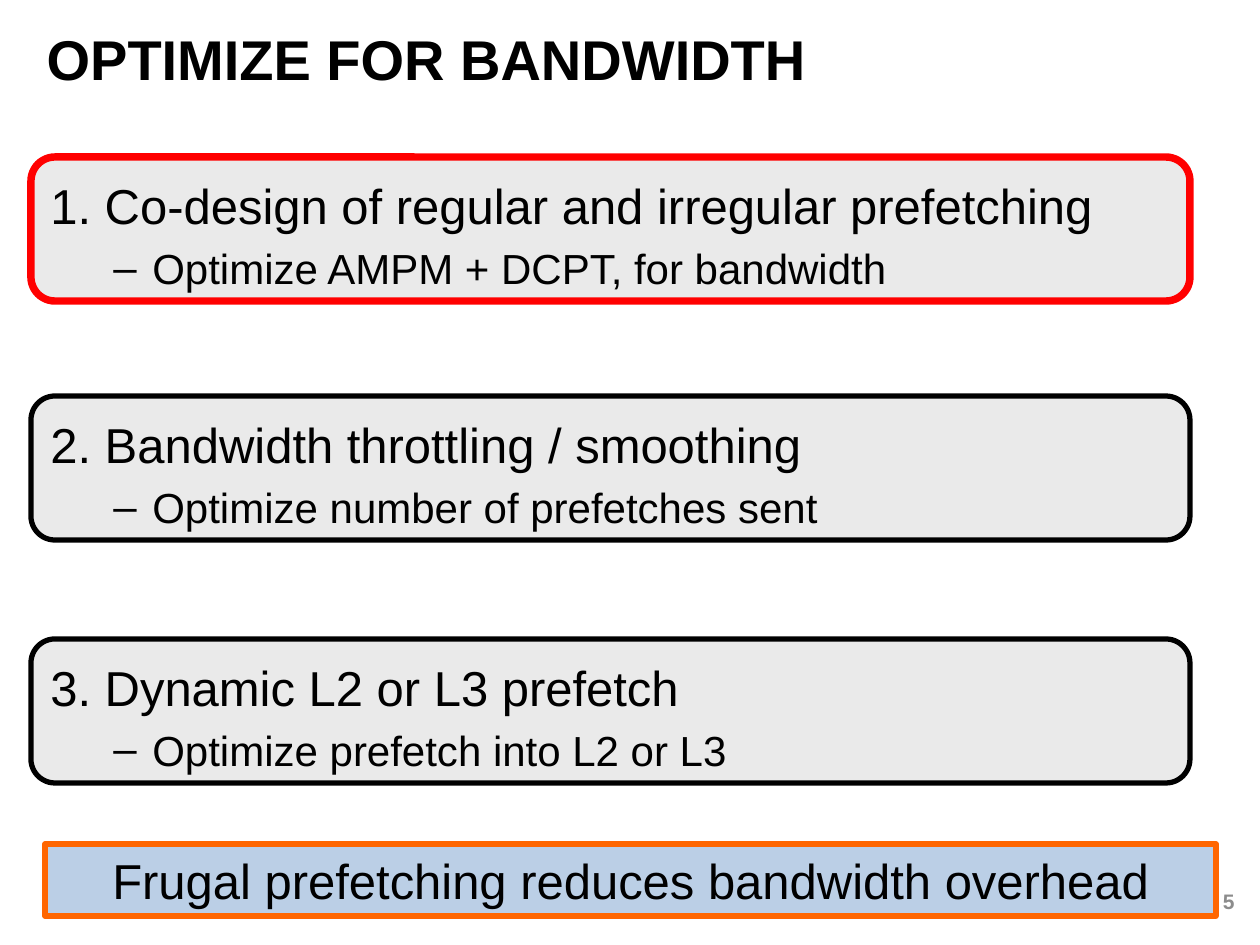
from pptx import Presentation
from pptx.dml.color import RGBColor
from pptx.enum.shapes import MSO_SHAPE
from pptx.enum.text import MSO_ANCHOR, PP_ALIGN
from pptx.oxml.ns import qn
from pptx.util import Inches, Pt
from lxml.etree import SubElement

COLORS = {"text": "000000", "number": "8C8C8C", "card": "EAEAEA",
          "bar": "BBCFE6", "bar_line": "FF6600", "highlight": "FF0000"}
PX = Inches(1) / 126


def add_panel(kind, bounds, fill, line, line_width):
    panel = slide.shapes.add_shape(kind, *[round(v * PX) for v in bounds])
    panel.shadow.inherit = False
    if fill:
        panel.fill.solid()
        panel.fill.fore_color.rgb = RGBColor.from_string(COLORS[fill])
    else:
        panel.fill.background()
    panel.line.color.rgb = RGBColor.from_string(COLORS[line])
    panel.line.width = Pt(line_width)
    return panel


def set_text(paragraph, text, size, align=PP_ALIGN.LEFT, color="text", bold=False):
    paragraph.text = text
    paragraph.alignment = align
    font = paragraph.runs[0].font
    font.name = "Arial"
    font.size = Pt(size)
    font.bold = bold
    font.color.rgb = RGBColor.from_string(COLORS[color])


prs = Presentation()
prs.slide_width = round(1260 * PX)
prs.slide_height = round(945 * PX)
slide = prs.slides.add_slide(prs.slide_layouts[5])

title = slide.shapes.title
title.left, title.top, title.width, title.height = [
    round(v * PX) for v in (34, 25, 1155, 67)]
title.text_frame.vertical_anchor = MSO_ANCHOR.MIDDLE
set_text(title.text_frame.paragraphs[0], "OPTIMIZE FOR BANDWIDTH", 32, bold=True)

page_number = slide.shapes.add_textbox(*[round(v * PX) for v in (954, 876, 293, 50)])
page_number.text_frame.word_wrap = True
page_number.text_frame.vertical_anchor = MSO_ANCHOR.MIDDLE
set_text(page_number.text_frame.paragraphs[0], "5", 12, PP_ALIGN.RIGHT, "number", True)

takeaway = add_panel(MSO_SHAPE.RECTANGLE, (45, 844, 1171, 72), "bar", "bar_line", 3)
takeaway.text_frame.word_wrap = True
takeaway.text_frame.vertical_anchor = MSO_ANCHOR.TOP
set_text(takeaway.text_frame.paragraphs[0],
         "Frugal prefetching reduces bandwidth overhead", 28, PP_ALIGN.CENTER)

CARD_LEFT, CARD_WIDTH, CARD_HEIGHT = 31, 1159, 144
optimizations = [
    (157, "1. Co-design of regular and irregular prefetching",
     "Optimize AMPM + DCPT, for bandwidth"),
    (396, "2. Bandwidth throttling / smoothing",
     "Optimize number of prefetches sent"),
    (639, "3. Dynamic L2 or L3 prefetch",
     "Optimize prefetch into L2 or L3"),
]
for top, heading, detail in optimizations:
    card = add_panel(MSO_SHAPE.ROUNDED_RECTANGLE,
                     (CARD_LEFT, top, CARD_WIDTH, CARD_HEIGHT), "card", "text", 3)
    frame = card.text_frame
    frame.word_wrap = True
    frame.vertical_anchor = MSO_ANCHOR.MIDDLE
    frame.margin_top = round(16 * PX)
    set_text(frame.paragraphs[0], heading, 28)

    detail_line = frame.add_paragraph()
    detail_line.level = 1
    detail_line.space_before = Pt(4.8)
    properties = detail_line._p.get_or_add_pPr()
    properties.set("marL", str(round(102 * PX)))
    properties.set("indent", str(round(-39 * PX)))
    SubElement(properties, qn("a:buFont"), typeface="Arial")
    SubElement(properties, qn("a:buChar"), char="–")
    set_text(detail_line, detail, 24)

add_panel(MSO_SHAPE.ROUNDED_RECTANGLE,
          (CARD_LEFT, optimizations[0][0], CARD_WIDTH, CARD_HEIGHT),
          None, "highlight", 4.25)

prs.save("out.pptx")
